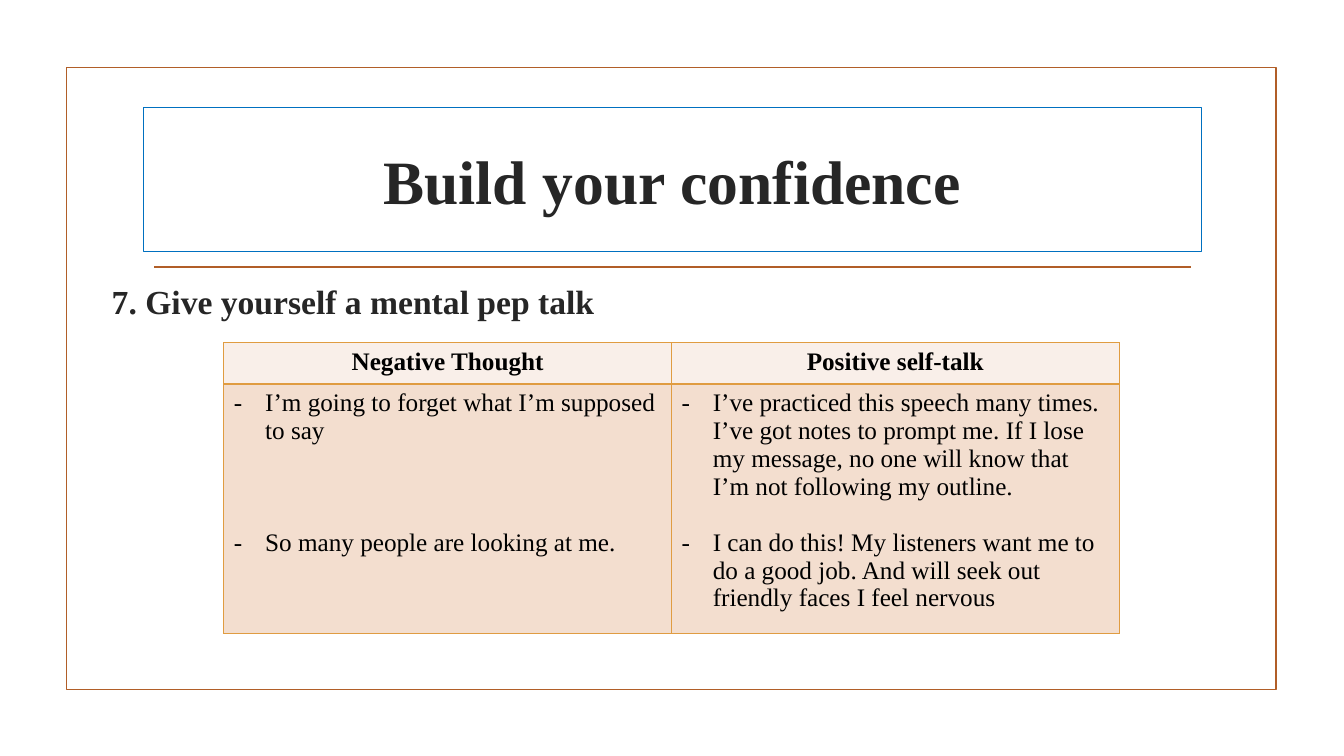
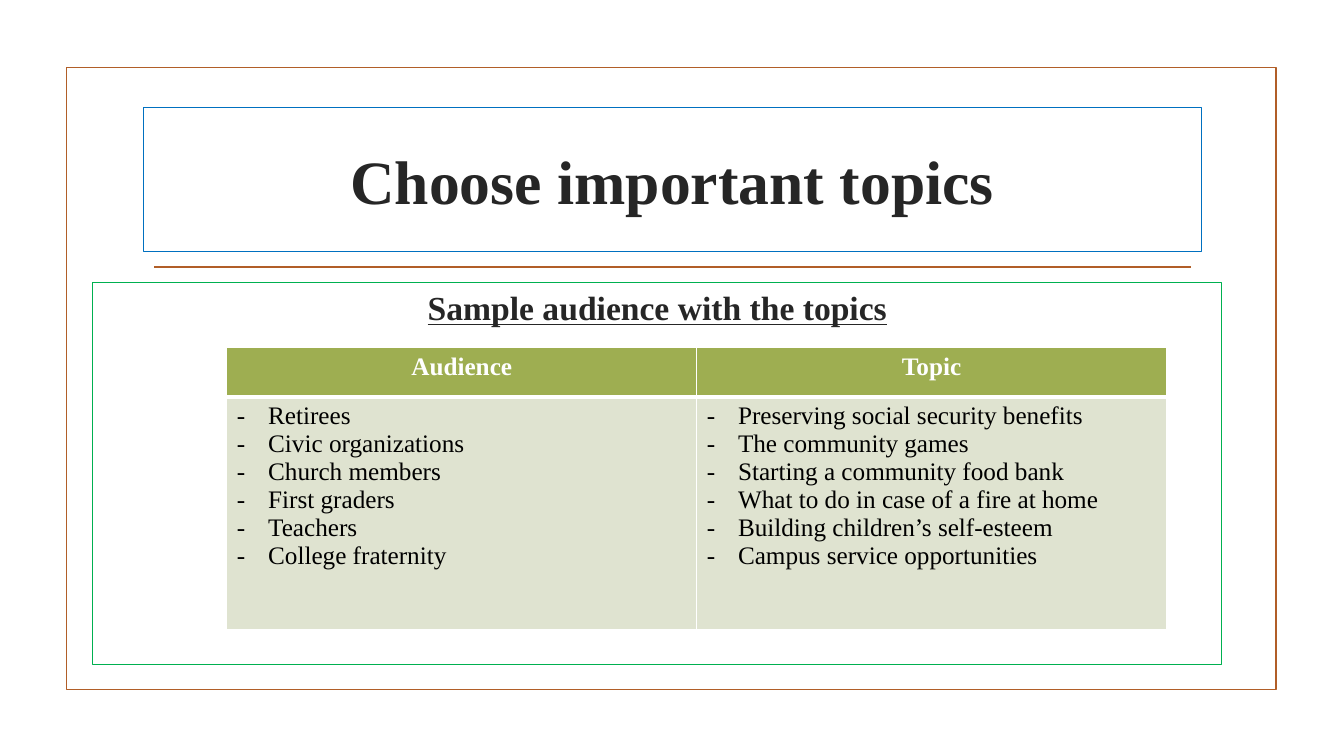
import pptx
import pptx.dml.color
import pptx.enum.shapes
import pptx.enum.text
import pptx.oxml
import pptx.oxml.ns
import pptx.util
import lxml.etree

Inches = pptx.util.Inches
Pt = pptx.util.Pt
CENTER = pptx.enum.text.PP_ALIGN.CENTER
LEFT = pptx.enum.text.PP_ALIGN.LEFT
TITLE_ONLY = 5


def color(value):
    return pptx.dml.color.RGBColor.from_string(value)


def add_child(parent, tag, **attributes):
    return lxml.etree.SubElement(parent, pptx.oxml.ns.qn(tag), **attributes)


class Deck:
    FONT = "Times New Roman"
    INK = "262626"
    BLACK = "000000"
    WHITE = "FFFFFF"
    RUST = "B15E28"
    TITLE_BLUE = "0070C0"
    BULLET_INDENT = Inches(0.31)

    def __init__(self):
        self.presentation = pptx.Presentation()
        self.presentation.slide_width = Inches(13.33)
        self.presentation.slide_height = Inches(7.5)
        self.slide = None

    def add_slide(self, title):
        layout = self.presentation.slide_layouts[TITLE_ONLY]
        self.slide = self.presentation.slides.add_slide(layout)
        self.frame(0.66, 0.67, 12, 6.17, self.RUST, 1.25)
        self.rule(1.53, 11.81, 2.65)
        self.title(title)

    def frame(self, left, top, width, height, line_color, line_width):
        shape = self.slide.shapes.add_shape(
            pptx.enum.shapes.MSO_SHAPE.RECTANGLE,
            Inches(left), Inches(top), Inches(width), Inches(height))
        shape.shadow.inherit = False
        shape.fill.background()
        self.outline(shape, line_color, line_width)
        return shape

    def outline(self, shape, line_color, line_width):
        shape.line.color.rgb = color(line_color)
        shape.line.width = Pt(line_width)

    def rule(self, left, right, top):
        connector = self.slide.shapes.add_connector(
            pptx.enum.shapes.MSO_CONNECTOR.STRAIGHT,
            Inches(left), Inches(top), Inches(right), Inches(top))
        self.outline(connector, self.RUST, 1.25)
        add_child(connector._element.spPr, "a:effectLst")

    def title(self, text):
        shape = self.slide.shapes.title
        shape.left, shape.top = Inches(1.42), Inches(1.07)
        shape.width, shape.height = Inches(10.5), Inches(1.43)
        self.outline(shape, self.TITLE_BLUE, 0.75)
        text_frame = shape.text_frame
        text_frame.auto_size = pptx.enum.text.MSO_AUTO_SIZE.NONE
        text_frame.vertical_anchor = pptx.enum.text.MSO_ANCHOR.MIDDLE
        text_frame.text = text
        self.style(text_frame.paragraphs[0], 44, self.INK, True, CENTER)

    def style(self, paragraph, size, text_color, bold, alignment=LEFT):
        paragraph.alignment = alignment
        paragraph.font.name = self.FONT
        paragraph.font.size = Pt(size)
        paragraph.font.bold = bold
        paragraph.font.color.rgb = color(text_color)

    def heading(self, text, left, top, width, height, border=None):
        """Subheading at the top of a box, centred if the box has a border."""
        if border:
            shape = self.frame(left, top, width, height, border, 0.75)
        else:
            shape = self.slide.shapes.add_textbox(
                Inches(left), Inches(top), Inches(width), Inches(height))
        text_frame = shape.text_frame
        text_frame.word_wrap = True
        text_frame.vertical_anchor = pptx.enum.text.MSO_ANCHOR.TOP
        text_frame.text = text
        paragraph = text_frame.paragraphs[0]
        self.style(paragraph, 24, self.INK, True, CENTER if border else LEFT)
        if border:
            paragraph.font.underline = True

    def table(self, left, top, column_width, row_heights, columns, header_fill,
              header_color, body_fill, border, divider_width=1, gaps=(0, 0)):
        """One header row over one row of bulleted lists."""
        table = self.slide.shapes.add_table(
            2, len(columns), Inches(left), Inches(top),
            Inches(column_width * len(columns)), Inches(sum(row_heights))).table
        table.first_row = table.horz_banding = False
        for row, height in zip(table.rows, row_heights):
            row.height = Inches(height)
        for index, (header, items) in enumerate(columns):
            table.columns[index].width = Inches(column_width)
            header_cell, body_cell = table.cell(0, index), table.cell(1, index)
            self.cell(header_cell, header_fill, border, bottom=divider_width)
            header_cell.text = header
            self.style(header_cell.text_frame.paragraphs[0], 18, header_color,
                       True, CENTER)
            self.cell(body_cell, body_fill, border, top=divider_width)
            self.bullets(body_cell.text_frame, items, gaps[index])

    def cell(self, cell, fill, border, top=1, bottom=1):
        cell.fill.solid()
        cell.fill.fore_color.rgb = color(fill)
        properties = cell._tc.get_or_add_tcPr()
        sides = (("a:lnL", 1), ("a:lnR", 1), ("a:lnT", top), ("a:lnB", bottom))
        for position, (tag, width) in enumerate(sides):
            line = add_child(properties, tag, w=str(Pt(width)))
            add_child(add_child(line, "a:solidFill"), "a:srgbClr", val=border)
            properties.insert(position, line)

    def bullets(self, text_frame, items, gap):
        text_frame.text = "\n".join(items)
        for index, paragraph in enumerate(text_frame.paragraphs):
            properties = paragraph._p.get_or_add_pPr()
            properties.set("marL", str(self.BULLET_INDENT))
            properties.set("indent", str(-self.BULLET_INDENT))
            add_child(properties, "a:buFont", typeface=self.FONT)
            add_child(properties, "a:buChar", char="-")
            self.style(paragraph, 18, self.BLACK, False)
            if index and gap:
                paragraph.space_before = Pt(gap)


def main():
    deck = Deck()

    # Confidence: negative thoughts against positive self-talk
    deck.add_slide("Build your confidence")
    deck.heading("7. Give yourself a mental pep talk", 1.01, 2.74, 8.15, 0.6)
    deck.table(
        2.22, 3.4, 4.44, (0.41, 2.31),
        (("Negative Thought", (
            "I’m going to forget what I’m supposed to say",
            "So many people are looking at me.")),
         ("Positive self-talk", (
             "I’ve practiced this speech many times. I’ve got notes to prompt "
             "me. If I lose my message, no one will know that I’m not "
             "following my outline.",
             "I can do this! My listeners want me to do a good job. And will "
             "seek out friendly faces I feel nervous"))),
        header_fill="F9EFE9", header_color=deck.BLACK, body_fill="F3DECF",
        border="E09C41", gaps=(60, 20))

    # Topics: audiences and what suits them
    deck.add_slide("Choose important topics")
    deck.heading("Sample audience with the topics", 0.92, 2.8, 11.2, 3.79,
                 border="00B050")
    deck.table(
        2.25, 3.45, 4.66, (0.49, 2.31),
        (("Audience", (
            "Retirees", "Civic organizations", "Church members",
            "First graders", "Teachers", "College fraternity")),
         ("Topic", (
             "Preserving social security benefits", "The community games",
             "Starting a community food bank",
             "What to do in case of a fire at home",
             "Building children’s self-esteem",
             "Campus service opportunities"))),
        header_fill="9EAE51", header_color=deck.WHITE, body_fill="DFE3D0",
        border=deck.WHITE, divider_width=3)

    deck.presentation.save("out.pptx")


if __name__ == "__main__":
    main()
